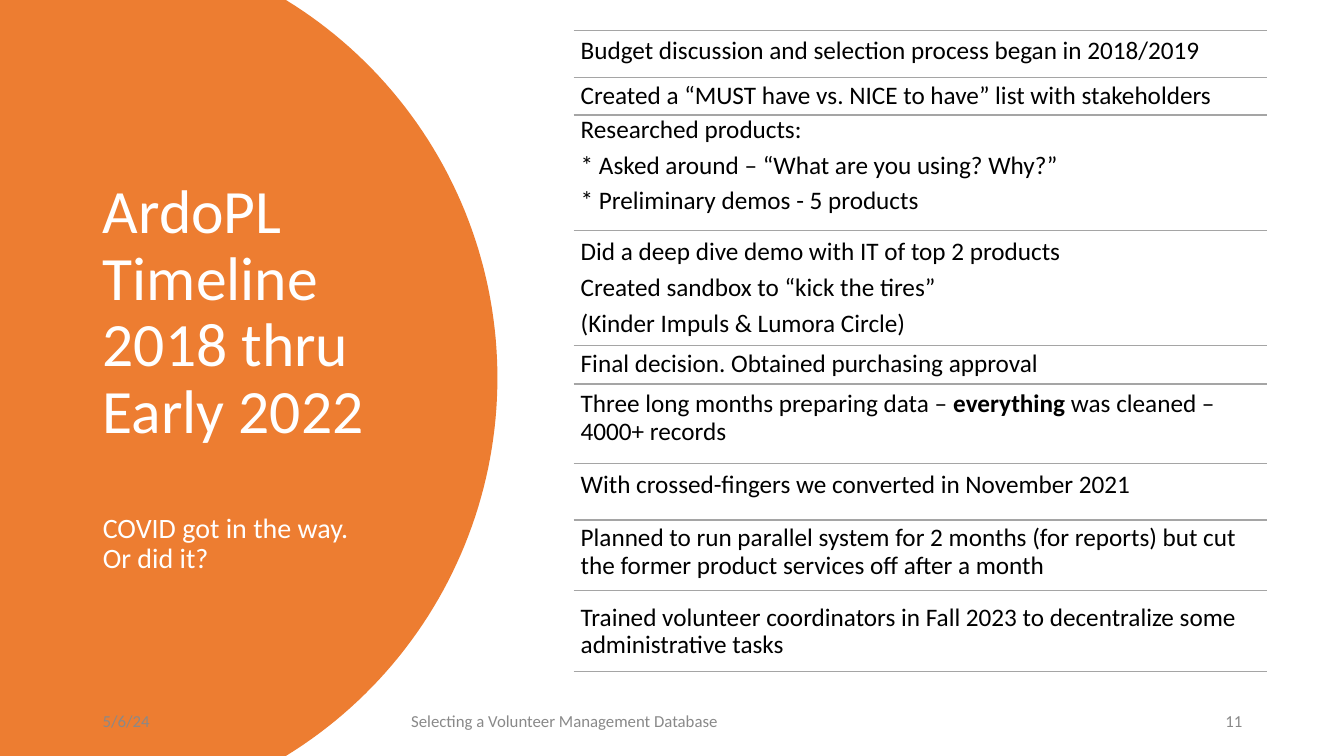
"""Build a timeline slide: a title on a round panel beside ruled milestones."""
import math
from dataclasses import dataclass

from lxml import etree
from pptx import Presentation
from pptx import util as u
from pptx.dml.color import RGBColor
from pptx.enum import shapes, text
from pptx.oxml.ns import qn
from pptx.slide import Slide
from pptx.text.text import TextFrame

ORANGE = RGBColor(0xED, 0x7D, 0x31)
WHITE = RGBColor(0xFF, 0xFF, 0xFF)
BLACK = RGBColor(0x00, 0x00, 0x00)
GREY = RGBColor(0x89, 0x89, 0x89)
RULE = RGBColor(0xA5, 0xA5, 0xA5)

FONT = "Calibri"
WIDTH, HEIGHT = u.Inches(13.33), u.Inches(7.5)
LIST_LEFT, LIST_WIDTH = 42.68, 51.6
LIST_BOTTOM = 88.8
FOOT_TOP, FOOT_HEIGHT = 92.67, 5.33
LEFT, RIGHT = text.PP_ALIGN.LEFT, text.PP_ALIGN.RIGHT


@dataclass(frozen=True)
class Milestone:
    """Rule, text top and text height in percent of the slide; ** marks bold."""
    rule: float
    top: float
    height: float
    lines: tuple[str, ...]


@dataclass(frozen=True)
class FooterItem:
    """Left and width in percent of the slide's width."""
    left: float
    width: float
    label: str
    align: text.PP_ALIGN = LEFT


MILESTONES = (
    Milestone(4, 4, 16.13, ("Budget discussion and selection process began in 2018/2019",)),
    Milestone(10.27, 10, 16.13, ("Created a “MUST have vs. NICE to have” list with stakeholders",)),
    Milestone(15.2, 14.53, 16.13, ("Researched products:",
                                   "* Asked around – “What are you using? Why?”",
                                   "* Preliminary demos - 5 products")),
    Milestone(30.53, 30.67, 16.13, ("Did a deep dive demo with IT of top 2 products",
                                    "Created sandbox to “kick the tires”",
                                    "(Kinder Impuls & Lumora Circle)")),
    Milestone(45.73, 45.47, 16.13, ("Final decision. Obtained purchasing approval",)),
    Milestone(50.8, 50.8, 21.87, ("Three long months preparing data – **everything** "
                                  "was cleaned – 4000+ records",)),
    Milestone(61.33, 61.47, 13.73, ("With crossed-fingers we converted in November 2021",)),
    Milestone(68.8, 68.53, 13.73, ("Planned to run parallel system for 2 months (for reports) "
                                   "but cut the former product services off after a month",)),
    Milestone(78.13, 79.07, 12.67, ("Trained volunteer coordinators in Fall 2023 to decentralize "
                                    "some administrative tasks",)),
)
FOOTER = (
    FooterItem(6.9, 22.5, "5/6/24"),
    FooterItem(29.86, 37, "Selecting a Volunteer Management Database"),
    FooterItem(70.67, 22.5, "11", RIGHT),
)


def x(share: float) -> int:
    """Turn a percentage of the slide's width into a length."""
    return u.Emu(round(WIDTH * share / 100))


def y(share: float) -> int:
    """Turn a percentage of the slide's height into a length."""
    return u.Emu(round(HEIGHT * share / 100))


def write(tf: TextFrame, lines: tuple[str, ...], *, size: float, color: RGBColor,
          align: text.PP_ALIGN = LEFT, spacing: float = 0.9, after: float = 0) -> None:
    """Add lines as paragraphs, setting the parts between ** in bold."""
    for line in lines:
        p = tf.add_paragraph() if tf.paragraphs[0].runs else tf.paragraphs[0]
        p.alignment, p.line_spacing = align, spacing
        p.space_before, p.space_after = u.Pt(0), u.Pt(after)
        for i, part in enumerate(line.split("**")):
            r = p.add_run()
            r.text = part
            r.font.name, r.font.size = FONT, u.Pt(size)
            r.font.bold = i % 2 == 1
            r.font.color.rgb = color


def add_box(s: Slide, left: float, top: float, width: float, height: float) -> TextFrame:
    """Add a wrapping text box placed by percentages."""
    tf = s.shapes.add_textbox(x(left), y(top), x(width), y(height)).text_frame
    tf.word_wrap = True
    return tf


def add_panel(s: Slide) -> None:
    """Draw the panel whose right side is a circular arc."""
    center, radius, steps = x(4), y(58.67), 90
    half = math.asin(HEIGHT / 2 / radius)
    angles = [half * (2 * i / steps - 1) for i in range(steps + 1)]
    arc = [(round(center + radius * math.cos(a)), round(HEIGHT / 2 + radius * math.sin(a)))
           for a in angles]
    builder = s.shapes.build_freeform(0, 0)
    builder.add_line_segments(arc + [(0, HEIGHT)], close=True)
    sp = builder.convert_to_shape()
    sp.shadow.inherit = False
    sp.fill.solid()
    sp.fill.fore_color.rgb = ORANGE
    sp.line.fill.background()


def add_title(s: Slide) -> None:
    """Place the title and its subtitle on the panel."""
    sp = s.shapes.title
    sp.left, sp.top, sp.width, sp.height = x(6.9), y(9.33), x(24.23), y(81.2)
    tf = sp.text_frame
    tf.word_wrap = True
    tf.auto_size = text.MSO_AUTO_SIZE.NONE
    tf.vertical_anchor = text.MSO_ANCHOR.MIDDLE
    write(tf, ("ArdoPL Timeline 2018 thru Early 2022",), size=44, color=WHITE, after=48)
    write(tf, ("COVID got in the way.", "Or did it?"), size=20, color=WHITE)


def add_rule(s: Slide, top: float) -> None:
    """Draw one thin line across the list."""
    line = s.shapes.add_connector(shapes.MSO_CONNECTOR.STRAIGHT, x(LIST_LEFT), y(top),
                                  x(LIST_LEFT + LIST_WIDTH), y(top))
    line.line.color.rgb = RULE
    line.line.width = u.Pt(1)
    etree.SubElement(line._element.spPr, qn("a:effectLst"))


def add_milestone(s: Slide, item: Milestone) -> None:
    """Draw a milestone's rule and text."""
    add_rule(s, item.rule)
    tf = add_box(s, LIST_LEFT, item.top, LIST_WIDTH, item.height)
    tf.margin_left = tf.margin_right = tf.margin_top = tf.margin_bottom = u.Inches(0.07)
    write(tf, item.lines, size=18, color=BLACK, after=6)


def add_footer(s: Slide, item: FooterItem) -> None:
    """Draw one footer entry."""
    tf = add_box(s, item.left, FOOT_TOP, item.width, FOOT_HEIGHT)
    tf.vertical_anchor = text.MSO_ANCHOR.MIDDLE
    write(tf, (item.label,), size=12, color=GREY, align=item.align, spacing=1.0, after=6)


def main() -> None:
    """Build and save the slide."""
    prs = Presentation()
    prs.slide_width, prs.slide_height = WIDTH, HEIGHT
    s = prs.slides.add_slide(prs.slide_layouts[5])
    add_panel(s)
    title = s.shapes.title._element
    s.shapes._spTree.append(title)
    add_title(s)
    for entry in FOOTER:
        add_footer(s, entry)
    for milestone in MILESTONES:
        add_milestone(s, milestone)
    add_rule(s, LIST_BOTTOM)
    prs.save("out.pptx")


if __name__ == "__main__":
    main()
